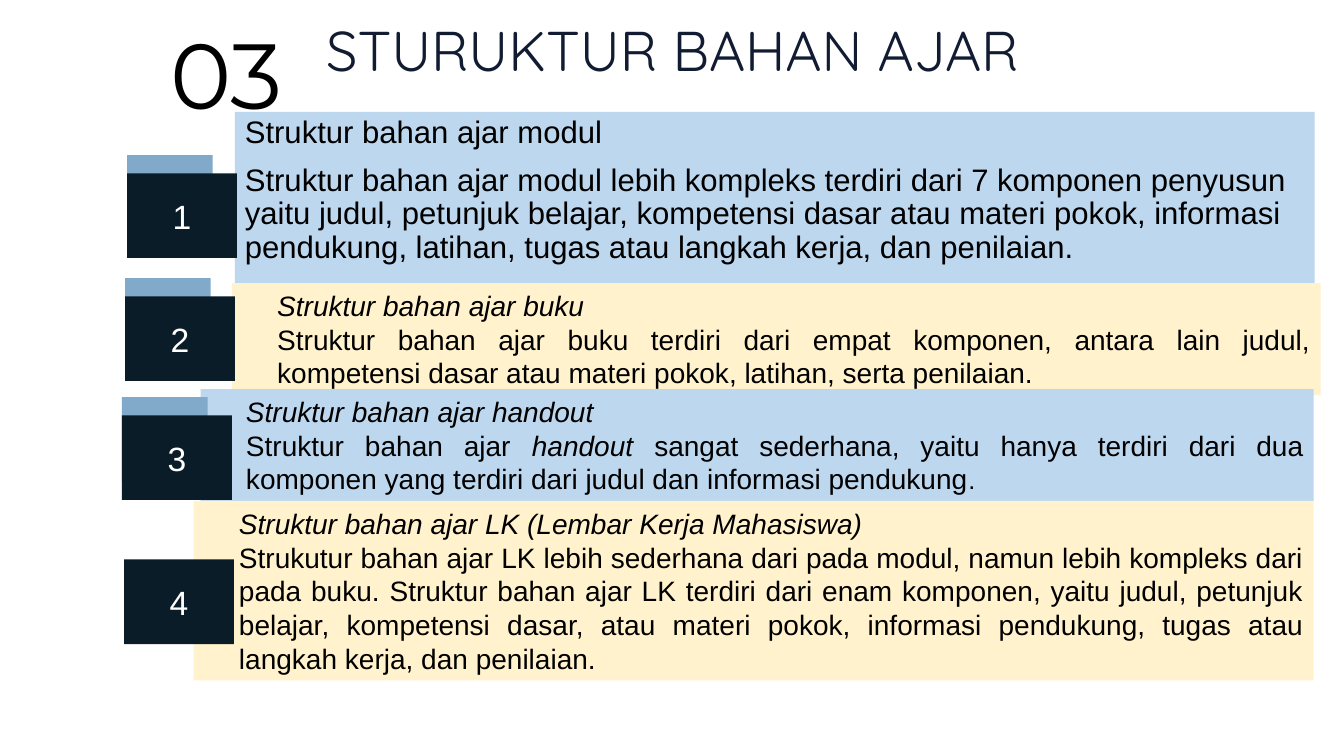
from dataclasses import dataclass

from pptx import Presentation
from pptx.dml.color import RGBColor
from pptx.enum.shapes import MSO_SHAPE
from pptx.enum.text import MSO_ANCHOR, PP_ALIGN
from pptx.util import Inches, Pt

RECTANGLE = MSO_SHAPE.RECTANGLE
TOP, MIDDLE = MSO_ANCHOR.TOP, MSO_ANCHOR.MIDDLE
LEFT, CENTER, JUSTIFY = PP_ALIGN.LEFT, PP_ALIGN.CENTER, PP_ALIGN.JUSTIFY


@dataclass(frozen=True)
class Theme:
    blue: str = "BDD7EE"
    cream: str = "FFF2CC"
    tab: str = "81AACA"
    navy: str = "0A1C28"
    title: str = "111B31"
    black: str = "000000"
    white: str = "FFFFFF"
    title_font: str = "Quicksand"
    number_font: str = "Montserrat"
    body_font: str = "Arial"
    title_size: float = 40
    number_size: float = 66
    lead_size: float = 22.2
    body_size: float = 20
    stop_size: float = 18
    badge_size: float = 24


THEME = Theme()

MODULE_TEXT = [
    [("Struktur bahan ajar modul", {})],
    [("Struktur bahan ajar modul lebih kompleks terdiri dari 7 komponen penyusun "
      "yaitu judul, petunjuk belajar, kompetensi dasar atau materi pokok, informasi "
      "pendukung, latihan, tugas atau langkah kerja, dan penilaian.", {})],
]
BOOK_TEXT = [
    [("Struktur bahan ajar buku", {"italic": True})],
    [("Struktur bahan ajar buku terdiri dari empat komponen, antara lain judul, "
      "kompetensi dasar atau materi pokok, latihan, serta penilaian.", {})],
]
HANDOUT_TEXT = [
    [("Struktur bahan ajar handout", {"italic": True})],
    [("Struktur bahan ajar ", {}),
     ("handout ", {"italic": True}),
     ("sangat sederhana, yaitu hanya terdiri dari dua komponen yang terdiri dari "
      "judul dan informasi pendukung", {}),
     (".", {"size": THEME.stop_size})],
]
WORKSHEET_TEXT = [
    [("Struktur bahan ajar LK (Lembar Kerja Mahasiswa)", {"italic": True})],
    [("Strukutur bahan ajar LK lebih sederhana dari pada modul, namun lebih kompleks "
      "dari pada buku. Struktur bahan ajar LK terdiri dari enam komponen, yaitu judul, "
      "petunjuk belajar, kompetensi dasar, atau materi pokok, informasi pendukung, "
      "tugas atau langkah kerja, dan penilaian.", {})],
]

PANELS = [
    ((2.3, 2.81, 10.8, 1.11), THEME.cream, BOOK_TEXT),
    ((1.99, 3.86, 11.04, 1.11), THEME.blue, HANDOUT_TEXT),
    ((1.92, 4.97, 11.11, 1.78), THEME.cream, WORKSHEET_TEXT),
]
BADGES = [
    ("2", 1.24, 2.94, True),
    ("1", 1.26, 1.72, True),
    ("3", 1.21, 4.12, True),
    ("4", 1.23, 5.55, False),
]
BADGE_WIDTH, BADGE_HEIGHT = 1.09, 0.84
TAB_WIDTH, TAB_RISE = 0.85, 0.18


def write_text(box, paragraphs, *, size, font=THEME.body_font, color=THEME.black,
               align=LEFT, anchor=TOP, left_inset=0.1, line_spacing=None, space_before=0):
    frame = box.text_frame
    frame.word_wrap = True
    frame.vertical_anchor = anchor
    frame.margin_left = Inches(left_inset)
    for index, spans in enumerate(paragraphs):
        para = frame.add_paragraph() if index else frame.paragraphs[0]
        para.alignment = align
        para.space_before = Pt(space_before)
        if line_spacing:
            para.line_spacing = line_spacing
        for text, style in spans:
            span = para.add_run()
            span.text = text
            span.font.name = font
            span.font.size = Pt(style.get("size", size))
            span.font.italic = style.get("italic", False)
            span.font.color.rgb = RGBColor.from_string(color)


def add_label(page, place, text, **style):
    box = page.shapes.add_textbox(*map(Inches, place))
    write_text(box, [[(text, {})]], **style)


def add_block(page, place, fill):
    block = page.shapes.add_shape(RECTANGLE, *map(Inches, place))
    block.shadow.inherit = False
    block.fill.solid()
    block.fill.fore_color.rgb = RGBColor.from_string(fill)
    block.line.fill.background()
    return block


def add_badge(page, number, left, top, has_tab):
    if has_tab:
        add_block(page, (left, top - TAB_RISE, TAB_WIDTH, BADGE_HEIGHT), THEME.tab)
    badge = add_block(page, (left, top, BADGE_WIDTH, BADGE_HEIGHT), THEME.navy)
    write_text(badge, [[(number, {})]], size=THEME.badge_size, color=THEME.white,
               align=CENTER, anchor=MIDDLE)


def main():
    deck = Presentation()
    deck.slide_width, deck.slide_height = Inches(13.33), Inches(7.5)
    page = deck.slides.add_slide(deck.slide_layouts[6])

    add_label(page, (0.92, 0.1, 11.5, 1.21), "STURUKTUR BAHAN AJAR", size=THEME.title_size,
              font=THEME.title_font, color=THEME.title, align=CENTER)
    add_label(page, (1.59, 0.12, 1.44, 1.21), "03", size=THEME.number_size,
              font=THEME.number_font)

    module = add_block(page, (2.33, 1.11, 10.71, 1.7), THEME.blue)
    write_text(module, MODULE_TEXT, size=THEME.lead_size, line_spacing=0.9, space_before=10)
    for place, fill, paragraphs in PANELS:
        panel = add_block(page, place, fill)
        write_text(panel, paragraphs, size=THEME.body_size, align=JUSTIFY, anchor=MIDDLE,
                   left_inset=0.45)
    for badge in BADGES:
        add_badge(page, *badge)

    deck.save("out.pptx")


if __name__ == "__main__":
    main()
